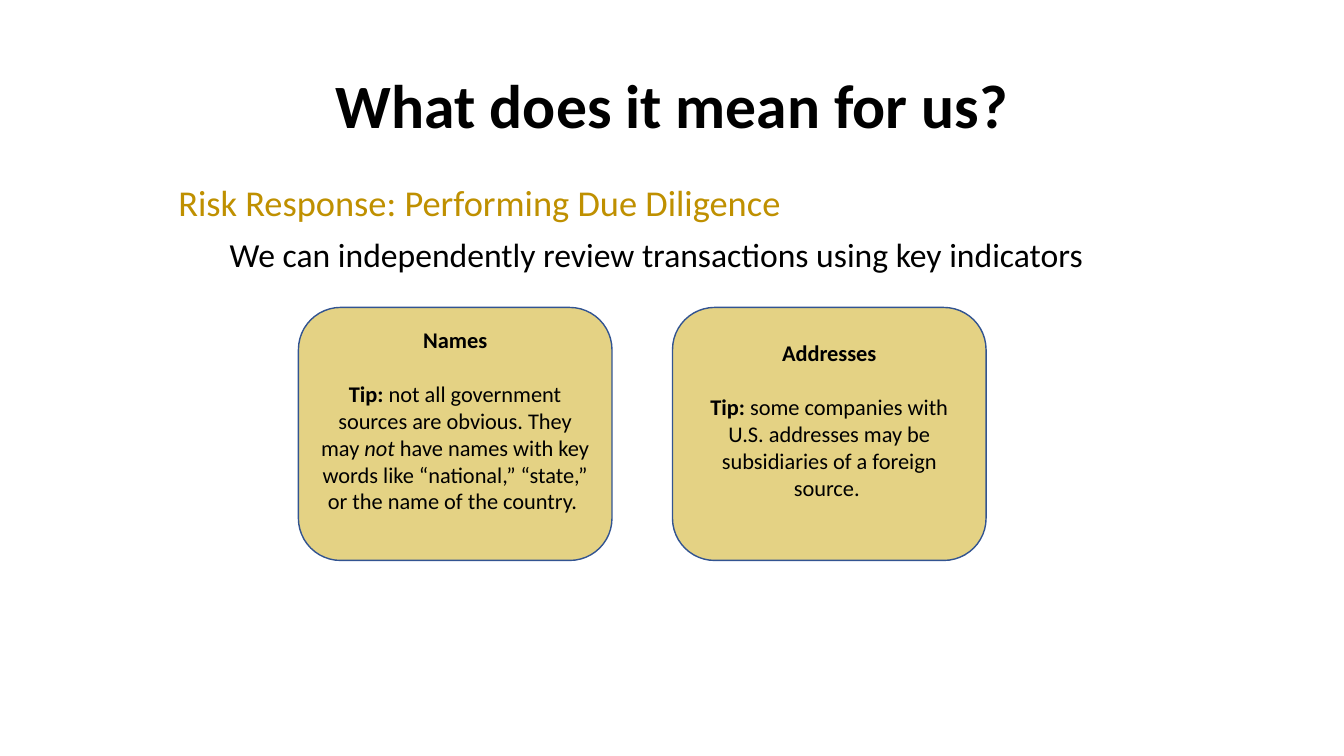
from dataclasses import dataclass, field

from pptx import Presentation
from pptx.dml.color import RGBColor
from pptx.enum.shapes import MSO_SHAPE
from pptx.enum.text import MSO_ANCHOR, PP_ALIGN
from pptx.shapes.autoshape import Shape
from pptx.slide import Slide
from pptx.text.text import TextFrame
from pptx.util import Inches, Pt

FONT = "Calibri"
BLACK, GOLD, SAND, NAVY = "000000", "BF9000", "E4D284", "325491"
BOLD, ITALIC = {"bold": True}, {"italic": True}

CARD_LEFT, CARD_TOP, CARD_STEP = 2.96, 3.05, 3.71
CARD_WIDTH, CARD_HEIGHT = 3.11, 2.51
CARD_LINE = 19.5  # points, one line of 16 pt text


@dataclass
class Run:
    text: str
    style: dict[str, bool] = field(default_factory=dict)


@dataclass
class Line:
    runs: list[Run]
    size: float
    color: str = BLACK
    indent: float = 0
    layout: dict = field(default_factory=dict)


@dataclass
class Card:
    heading: str
    tip: list[Run]


CARDS = [
    Card("Names", [
        Run("Tip:", BOLD),
        Run(" not all government sources are obvious. They may "),
        Run("not", ITALIC),
        Run(" have names with key words like “national,” “state,” "
            "or the name of the country. "),
    ]),
    Card("Addresses", [
        Run("Tip: ", BOLD),
        Run("some companies with U.S. addresses may be subsidiaries "
            "of a foreign source. "),
    ]),
]


def rgb(color: str) -> RGBColor:
    return RGBColor.from_string(color)


def apply(target: object, values: dict) -> None:
    for name, value in values.items():
        setattr(target, name, value)


def write_lines(frame: TextFrame, lines: list[Line]) -> None:
    frame.word_wrap = True
    for index, line in enumerate(lines):
        paragraph = frame.add_paragraph() if index else frame.paragraphs[0]
        apply(paragraph, line.layout)
        if line.indent:
            properties = paragraph._p.get_or_add_pPr()
            properties.set("marL", str(Inches(line.indent)))
            properties.set("indent", "0")
        for part in line.runs:
            run = paragraph.add_run()
            run.text = part.text
            apply(run.font, {"name": FONT, "size": Pt(line.size), **part.style})
            run.font.color.rgb = rgb(line.color)


def add_text(slide: Slide, top: float, height: float, lines: list[Line],
             anchor: MSO_ANCHOR = MSO_ANCHOR.TOP) -> None:
    box = slide.shapes.add_textbox(
        Inches(1.67), Inches(top), Inches(10), Inches(height))
    box.text_frame.vertical_anchor = anchor
    write_lines(box.text_frame, lines)


def add_card(slide: Slide, card: Card, left: float) -> Shape:
    shape = slide.shapes.add_shape(
        MSO_SHAPE.ROUNDED_RECTANGLE, Inches(left), Inches(CARD_TOP),
        Inches(CARD_WIDTH), Inches(CARD_HEIGHT))
    shape.shadow.inherit = False
    shape.fill.solid()
    shape.fill.fore_color.rgb = rgb(SAND)
    shape.line.color.rgb = rgb(NAVY)
    shape.line.width = Pt(1)
    apply(shape.text_frame, {
        "vertical_anchor": MSO_ANCHOR.MIDDLE,
        "margin_bottom": Inches(0.05) + Pt(CARD_LINE),
    })
    centered = {"alignment": PP_ALIGN.CENTER}
    write_lines(shape.text_frame, [
        Line([Run(card.heading, BOLD)], 16, layout=centered),
        Line(card.tip, 16, layout={**centered, "space_before": Pt(CARD_LINE)}),
    ])
    return shape


def main() -> None:
    presentation = Presentation()
    apply(presentation, {"slide_width": Inches(13.33), "slide_height": Inches(7.5)})
    slide = presentation.slides.add_slide(presentation.slide_layouts[6])

    tight = {"line_spacing": 0.9}
    add_text(slide, 0.78, 0.68, [
        Line([Run("What does it mean for us?", BOLD)], 44,
             layout={**tight, "alignment": PP_ALIGN.CENTER}),
    ], MSO_ANCHOR.BOTTOM)
    add_text(slide, 1.79, 3.84, [
        Line([Run("Risk Response: Performing Due Diligence")], 26, GOLD, layout=tight),
        Line([Run("We can independently review transactions using key indicators")],
             24, indent=0.51, layout={**tight, "space_before": Pt(10)}),
    ])
    for index, card in enumerate(CARDS):
        add_card(slide, card, CARD_LEFT + index * CARD_STEP)

    presentation.save("out.pptx")


if __name__ == "__main__":
    main()
